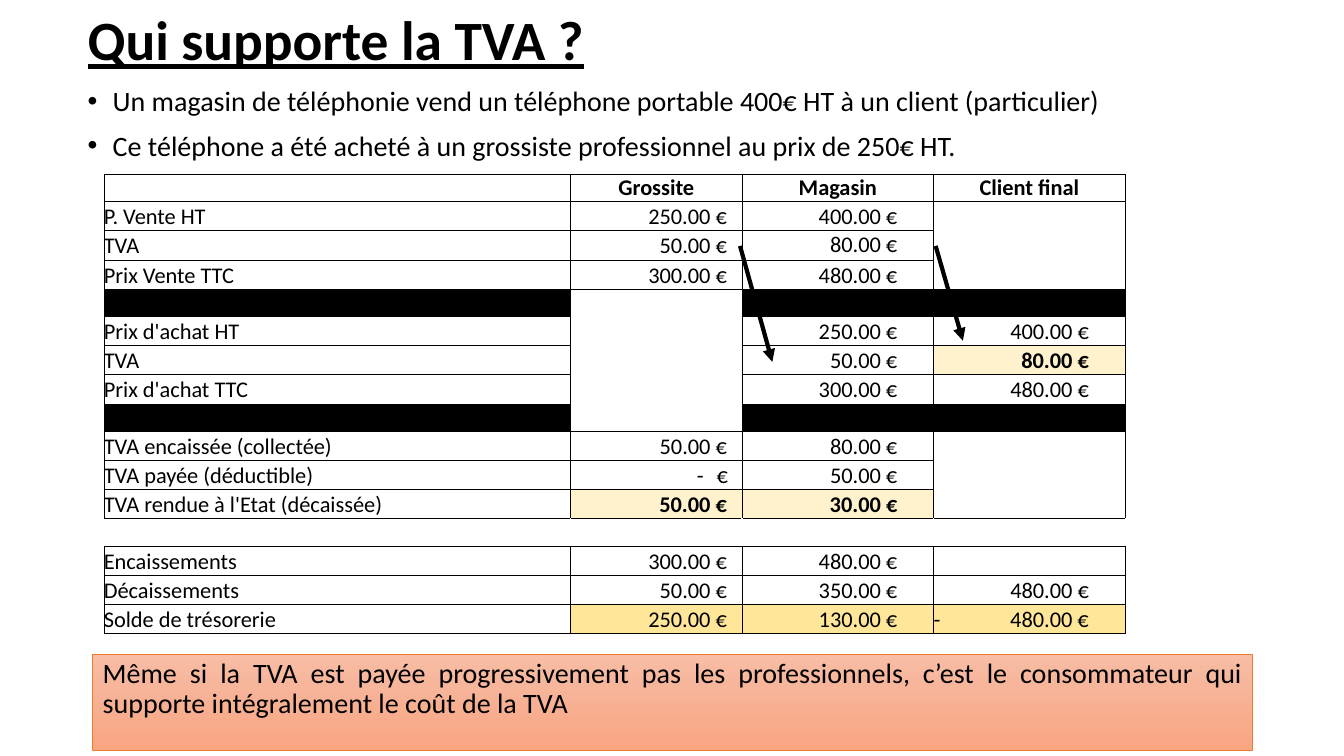
from lxml import etree
from pptx import Presentation
from pptx.dml.color import RGBColor
from pptx.enum.shapes import MSO_CONNECTOR, MSO_SHAPE
from pptx.enum.text import MSO_ANCHOR, PP_ALIGN
from pptx.oxml.ns import qn
from pptx.util import Inches, Pt

STRAIGHT, RECTANGLE = MSO_CONNECTOR.STRAIGHT, MSO_SHAPE.RECTANGLE
TOP, MIDDLE, BOTTOM = MSO_ANCHOR.TOP, MSO_ANCHOR.MIDDLE, MSO_ANCHOR.BOTTOM
LEFT, CENTER, RIGHT = PP_ALIGN.LEFT, PP_ALIGN.CENTER, PP_ALIGN.RIGHT
JUSTIFY = PP_ALIGN.JUSTIFY

BLACK = RGBColor(0x00, 0x00, 0x00)
CREAM = RGBColor(0xFF, 0xF2, 0xCC)
GOLD = RGBColor(0xFF, 0xE6, 0x99)
ORANGE = RGBColor(0xED, 0x7D, 0x31)
PEACH_LIGHT = RGBColor(0xF7, 0xBD, 0xA5)
PEACH_DARK = RGBColor(0xF8, 0xA5, 0x82)
FONT = "Calibri"

COLUMN_WIDTHS = [4.63, 1.7, 1.9, 1.9]
RIGHT_MARGINS = [0, 0.15, 0.36, 0.36]
ROW_HEIGHT, GAP_HEIGHT = 0.29, 0.27
EMPTY = ["", "", "", ""]
ROWS = [
    ["", "Grossite", "Magasin", "Client final"],
    ["P. Vente HT", "250.00 €", "400.00 €", ""],
    ["TVA", "50.00 €", "80.00 €", ""],
    ["Prix Vente TTC", "300.00 €", "480.00 €", ""],
    EMPTY,
    ["Prix d'achat HT", "", "250.00 €", "400.00 €"],
    ["TVA", "", "50.00 €", "80.00 €"],
    ["Prix d'achat TTC", "", "300.00 €", "480.00 €"],
    EMPTY,
    ["TVA encaissée (collectée)", "50.00 €", "80.00 €", ""],
    ["TVA payée (déductible)", "\t-\t€", "50.00 €", ""],
    ["TVA rendue à l'Etat (décaissée)", "50.00 €", "30.00 €", ""],
    EMPTY,
    ["Encaissements", "300.00 €", "480.00 €", ""],
    ["Décaissements", "50.00 €", "350.00 €", "480.00 €"],
    ["Solde de trésorerie", "250.00 €", "130.00 €", "-\t480.00 €"],
]
HEADER_ROW, SPACER_ROW = 0, 12
MERGES = [((1, 3), (3, 3)), ((4, 1), (8, 1)), ((9, 3), (11, 3))]
FILLS = {(row, col): BLACK for row in (4, 8) for col in (0, 2, 3)}
FILLS.update({(15, col): GOLD for col in (1, 2, 3)})
KEY_CELLS = [(6, 3), (11, 1), (11, 2)]
FILLS.update({key: CREAM for key in KEY_CELLS})
TOP_CELL = (2, 2)
TAB_STOPS = {(10, 1): [1.32, 1.56], (15, 3): [1.54]}


def add_span(para, text, size, bold=False, underline=False):
    span = para.add_run()
    span.text = text
    font = span.font
    font.name, font.size, font.bold = FONT, Pt(size), bold
    font.underline = underline
    font.color.rgb = BLACK


def add_text_box(page, left, top, width, height, anchor):
    box = page.shapes.add_textbox(Inches(left), Inches(top), Inches(width), Inches(height))
    box.text_frame.word_wrap = True
    box.text_frame.vertical_anchor = anchor
    return box.text_frame


def add_bullets(frame, lines):
    for number, line in enumerate(lines):
        para = frame.add_paragraph() if number else frame.paragraphs[0]
        para.line_spacing, para.space_before = 0.9, Pt(10)
        add_span(para, line, 20)
        props = para._p.get_or_add_pPr()
        props.set("marL", str(Inches(0.25)))
        props.set("indent", str(-Inches(0.25)))
        etree.SubElement(props, qn("a:buFont"), typeface="Arial")
        etree.SubElement(props, qn("a:buChar"), char="•")


def add_arrow(page, start_x, start_y, end_x, end_y):
    arrow = page.shapes.add_connector(
        STRAIGHT, Inches(start_x), Inches(start_y), Inches(end_x), Inches(end_y))
    arrow.line.color.rgb = BLACK
    arrow.line.width = Pt(3)
    etree.SubElement(arrow.line._get_or_add_ln(), qn("a:tailEnd"), type="triangle")
    etree.SubElement(arrow._element.spPr, qn("a:effectLst"))


def add_borders(cell, sides):
    props = cell._tc.get_or_add_tcPr()
    for position, side in enumerate(sides):
        line = etree.Element(qn(f"a:ln{side}"), w=str(Pt(0.5)))
        fill = etree.SubElement(line, qn("a:solidFill"))
        etree.SubElement(fill, qn("a:srgbClr"), val=str(BLACK))
        props.insert(position, line)


def add_tab_stops(para, stops):
    tabs = etree.SubElement(para._p.get_or_add_pPr(), qn("a:tabLst"))
    for stop in stops:
        etree.SubElement(tabs, qn("a:tab"), pos=str(Inches(stop)), algn="r")


def fill_cell(cell, row, col, text):
    key = (row, col)
    stops = TAB_STOPS.get(key)
    cell.margin_left = cell.margin_top = cell.margin_bottom = 0
    cell.margin_right = 0 if row == HEADER_ROW or stops else Inches(RIGHT_MARGINS[col])
    cell.vertical_anchor = TOP if key == TOP_CELL else BOTTOM
    if key in FILLS:
        cell.fill.solid()
        cell.fill.fore_color.rgb = FILLS[key]
    else:
        cell.fill.background()
    add_borders(cell, "TB" if row == SPACER_ROW else "LRTB")

    para = cell.text_frame.paragraphs[0]
    if row == HEADER_ROW:
        para.alignment = CENTER
    else:
        para.alignment = LEFT if col == 0 or stops else RIGHT
    if stops:
        add_tab_stops(para, stops)
    if text:
        add_span(para, text, 16, bold=row == HEADER_ROW or key in KEY_CELLS)
    else:
        # Keep empty cells from stretching their row
        etree.SubElement(para._p, qn("a:endParaRPr"), sz="1400")


def add_vat_table(page):
    frame = page.shapes.add_table(
        len(ROWS), len(COLUMN_WIDTHS), Inches(1.03), Inches(1.73),
        Inches(sum(COLUMN_WIDTHS)), Inches(4.54))
    table = frame.table
    table.first_row = table.horz_banding = False
    for column, width in zip(table.columns, COLUMN_WIDTHS):
        column.width = Inches(width)
    for row, texts in enumerate(ROWS):
        short = row == HEADER_ROW or texts is EMPTY
        table.rows[row].height = Inches(GAP_HEIGHT if short else ROW_HEIGHT)
        for col, text in enumerate(texts):
            fill_cell(table.cell(row, col), row, col, text)
    for first, last in MERGES:
        table.cell(*first).merge(table.cell(*last))


def add_conclusion(page, text):
    box = page.shapes.add_shape(
        RECTANGLE, Inches(0.92), Inches(6.49), Inches(11.5), Inches(0.95))
    box.shadow.inherit = False
    box.fill.gradient()
    box.fill.gradient_angle = 270
    for stop, color in zip(box.fill.gradient_stops, (PEACH_LIGHT, PEACH_DARK)):
        stop.color.rgb = color
    box.line.color.rgb = ORANGE
    box.line.width = Pt(0.5)
    box.text_frame.word_wrap = True
    box.text_frame.vertical_anchor = TOP
    para = box.text_frame.paragraphs[0]
    para.alignment = JUSTIFY
    para.line_spacing, para.space_before = 0.9, Pt(10)
    add_span(para, text, 20)


def main():
    deck = Presentation()
    deck.slide_width, deck.slide_height = Inches(13.33), Inches(7.5)
    page = deck.slides.add_slide(deck.slide_layouts[6])

    # Title and situation
    title = add_text_box(page, 0.77, 0.05, 11.1, 0.75, MIDDLE).paragraphs[0]
    title.line_spacing = 0.9
    add_span(title, "Qui supporte la TVA ?", 39.6, bold=True, underline=True)
    add_bullets(add_text_box(page, 0.77, 0.82, 11.5, 0.95, TOP), [
        "Un magasin de téléphonie vend un téléphone portable 400€ HT à un client (particulier)",
        "Ce téléphone a été acheté à un grossiste professionnel au prix de 250€ HT.",
    ])

    # VAT passed on from seller to buyer
    add_arrow(page, 9.28, 2.44, 9.55, 3.38)
    add_arrow(page, 7.34, 2.44, 7.66, 3.59)
    add_vat_table(page)

    # Conclusion
    add_conclusion(page, "Même si la TVA est payée progressivement pas les professionnels, "
                         "c’est le consommateur qui supporte intégralement le coût de la TVA")
    deck.save("out.pptx")


if __name__ == "__main__":
    main()
